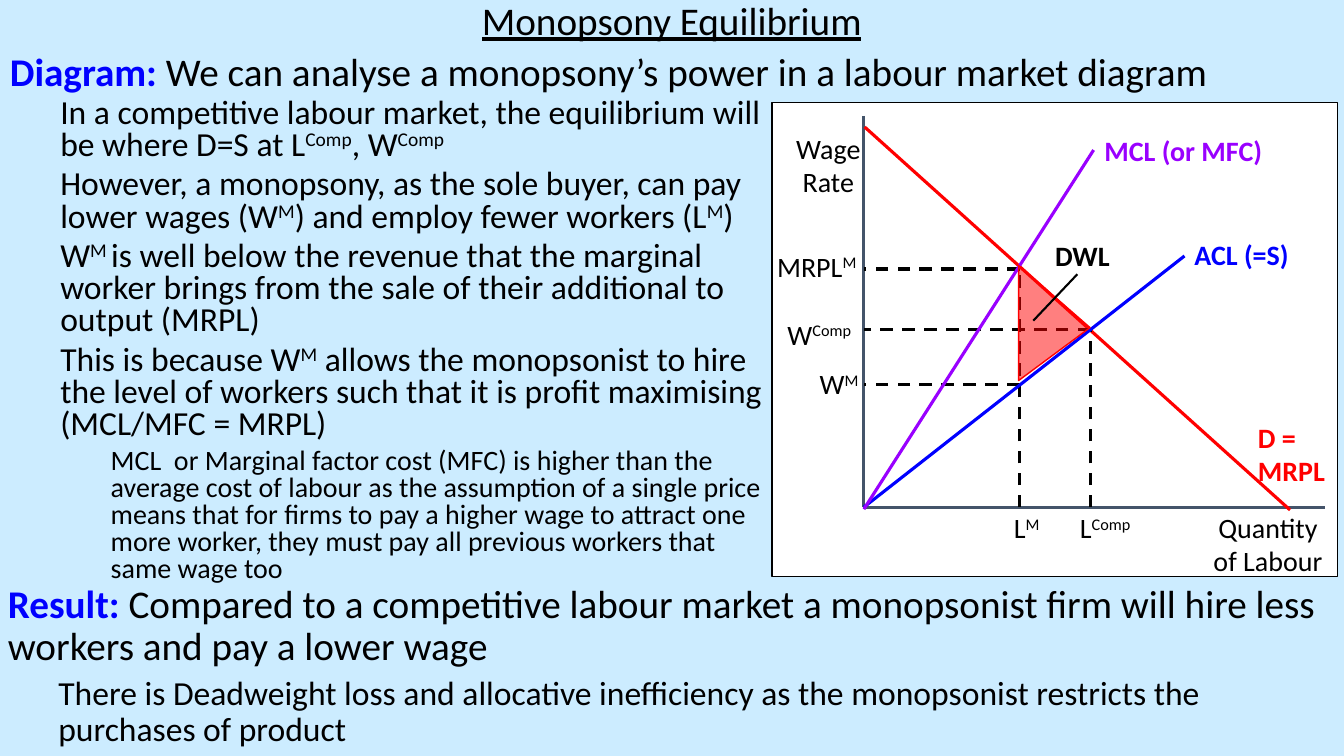
import pptx
import pptx.dml.color
import pptx.enum.dml
import pptx.enum.shapes
import pptx.enum.text
import pptx.oxml.ns
import pptx.oxml.xmlchemy
import pptx.util

Cm = pptx.util.Cm
Pt = pptx.util.Pt
ALIGN = pptx.enum.text.PP_ALIGN
SHAPE = pptx.enum.shapes.MSO_SHAPE
DASH = pptx.enum.dml.MSO_LINE.DASH

BLACK, WHITE, RED, BLUE, PURPLE, SLATE = (
    "000000", "FFFFFF", "FF0000", "0000FF", "9900FF", "44546A")
INDENT = 1.27
AXIS_X, AXIS_Y = 21.77, 12.78
LABOUR_MONOPSONY, LABOUR_COMPETITIVE = 25.7, 27.48
WAGE_MRPL, WAGE_COMPETITIVE, WAGE_MONOPSONY = 6.78, 8.31, 9.68

POINTS = [
    (1, 24, "In a competitive labour market, the equilibrium will be where "
            "D=S at L^Comp^, W^Comp"),
    (1, 24, "However, a monopsony, as the sole buyer, can pay lower wages "
            "(W^M^) and employ fewer workers (L^M^)"),
    (1, 24, "W^M ^is well below the revenue that the marginal worker brings "
            "from the sale of their additional to output (MRPL)"),
    (1, 24, "This is because W^M^ allows the monopsonist to hire the level of "
            "workers such that it is profit maximising (MCL/MFC = MRPL)"),
    (2, 20, "MCL  or Marginal factor cost (MFC) is higher than the average "
            "cost of labour as the assumption of a single price means that "
            "for firms to pay a higher wage to attract one more worker, they "
            "must pay all previous workers that same wage too"),
]

LABELS = [
    ("Quantity of Labour", 30.23, 12.73, 3.45, 1.73),
    ("Wage Rate", 19.58, 3.18, 2.59, 1.73),
    ("L^M", 24.87, 12.75, 2.01, 0.97),
    ("L^Comp", 26.85, 12.75, 2.01, 0.97),
    ("W^M", 20.14, 9.12, 2.01, 0.97),
    ("MRPL^M", 19.3, 6.15, 2.57, 0.97),
    ("W^Comp", 19.23, 7.87, 2.84, 0.97),
]

CURVE_LABELS = [
    ("ACL (=S)", BLUE, 29.85, 5.87, 3.48),
    ("MCL (or MFC)", PURPLE, 27.58, 3.23, 4.52),
    ("D = MRPL", RED, 31.45, 10.46, 3.05),
]

GUIDES = [
    (LABOUR_MONOPSONY, AXIS_Y, LABOUR_MONOPSONY, WAGE_MRPL),
    (LABOUR_MONOPSONY, WAGE_MONOPSONY, AXIS_X, WAGE_MONOPSONY),
    (LABOUR_COMPETITIVE, WAGE_COMPETITIVE, AXIS_X, WAGE_COMPETITIVE),
    (LABOUR_COMPETITIVE, AXIS_Y, LABOUR_COMPETITIVE, WAGE_COMPETITIVE),
    (LABOUR_MONOPSONY, WAGE_MRPL, AXIS_X, WAGE_MRPL),
]


def paint(colour_format, colour):
    colour_format.rgb = pptx.dml.color.RGBColor.from_string(colour)


def apply(target, values):
    for name, value in values.items():
        setattr(target, name, value)


def add_box(page, left, top, width, height):
    box = page.shapes.add_textbox(Cm(left), Cm(top), Cm(width), Cm(height))
    box.text_frame.word_wrap = True
    return box.text_frame


def add_spans(para, text, size, colour=BLACK, **values):
    for position, piece in enumerate(text.split("^")):
        if not piece:
            continue
        span = para.add_run()
        span.text = piece
        apply(span.font, {"name": "Calibri", "size": Pt(size), **values})
        paint(span.font.color, colour)
        if position % 2:
            span.font._element.set("baseline", "30000")


def add_para(frame, level=0, **values):
    first = frame.paragraphs[0]
    para = first if not first.runs else frame.add_paragraph()
    apply(para, {"level": level, **values})
    properties = para._p.get_or_add_pPr()
    properties.set("marL", str(Cm(level * INDENT)))
    properties.set("indent", "0")
    return para


def add_label(page, text, left, top, width, height=0.97,
              colour=BLACK, bold=False, align=ALIGN.LEFT):
    frame = add_box(page, left, top, width, height)
    add_spans(add_para(frame, alignment=align), text, 20, colour, bold=bold)


def add_heading(frame, lead, text, spacing):
    para = add_para(frame, line_spacing=spacing, space_before=Pt(10))
    add_spans(para, lead, 28, BLUE, bold=True)
    add_spans(para, text, 28)


def add_line(page, ends, colour=BLACK, width=2.25, dash=None):
    line = page.shapes.add_connector(
        pptx.enum.shapes.MSO_CONNECTOR.STRAIGHT, *map(Cm, ends))
    paint(line.line.color, colour)
    apply(line.line, {"width": Pt(width), "dash_style": dash})
    effects = pptx.oxml.xmlchemy.OxmlElement("a:effectLst")
    line._element.spPr.append(effects)


def add_filled(page, kind, area, fill, outline):
    shape = page.shapes.add_shape(kind, *map(Cm, area))
    shape.shadow.inherit = False
    shape.fill.solid()
    paint(shape.fill.fore_color, fill)
    paint(shape.line.color, outline)
    shape.line.width = Pt(1)
    return shape


def add_text(page):
    title = add_box(page, 0, 0, 33.86, 2.72)
    para = add_para(title, alignment=ALIGN.CENTER, line_spacing=0.8,
                    space_before=Pt(10))
    add_spans(para, "Monopsony Equilibrium", 28, underline=True)
    add_heading(title, "Diagram: ", "We can analyse a monopsony’s power in a "
                "labour market diagram", 0.8)

    body = add_box(page, 0, 2.36, 19.48, 12.85)
    for level, size, text in POINTS:
        para = add_para(body, level, line_spacing=0.8, space_before=Pt(5))
        add_spans(para, text, size)


def add_result(page):
    result = add_box(page, -0.05, 14.6, 33.86, 4.45)
    add_heading(result, "Result: ", "Compared to a competitive labour market "
                "a monopsonist firm will hire less workers and pay a lower "
                "wage", 0.9)
    para = add_para(result, 1, line_spacing=0.9, space_before=Pt(5))
    add_spans(para, "There is Deadweight loss and allocative inefficiency as "
              "the monopsonist restricts the purchases of product", 24)


def add_diagram(page):
    add_filled(page, SHAPE.RECTANGLE, (19.46, 2.59, 14.25, 11.94),
               WHITE, BLACK)
    add_line(page, (AXIS_X, 2.92, AXIS_X, AXIS_Y), SLATE)
    add_line(page, (AXIS_X, AXIS_Y, 33.38, AXIS_Y), SLATE)
    for label in LABELS:
        add_label(page, *label, align=ALIGN.CENTER)
    add_line(page, (21.79, 3.2, 32.51, 12.85), RED)
    for text, colour, left, top, width in CURVE_LABELS:
        add_label(page, text, left, top, width, colour=colour, bold=True)
    for guide in GUIDES:
        add_line(page, guide, dash=DASH)
    add_line(page, (AXIS_X, AXIS_Y, 29.85, 6.45), BLUE)
    add_line(page, (AXIS_X, 12.83, 27.56, 3.78), PURPLE)


def add_deadweight_loss(page):
    loss = add_filled(page, SHAPE.ISOSCELES_TRIANGLE,
                      (25.12, 7.24, 2.9, 1.8), RED, RED)
    loss.rotation = 90
    loss.adjustments[0] = 0.54
    alpha = pptx.oxml.xmlchemy.OxmlElement("a:alpha")
    alpha.set("val", "50000")
    fill = loss._element.spPr.find(pptx.oxml.ns.qn("a:solidFill"))
    fill[0].append(alpha)
    add_line(page, (26.04, 8.08, 27.15, 6.91), width=1.5)
    add_label(page, "DWL", 26.34, 5.89, 2.34, bold=True)


def main():
    deck = pptx.Presentation()
    apply(deck, {"slide_width": Cm(33.87), "slide_height": Cm(19.05)})
    page = deck.slides.add_slide(deck.slide_layouts[6])
    page.background.fill.solid()
    paint(page.background.fill.fore_color, "CCECFF")
    add_text(page)
    add_diagram(page)
    add_result(page)
    add_deadweight_loss(page)
    deck.save("out.pptx")


if __name__ == "__main__":
    main()
